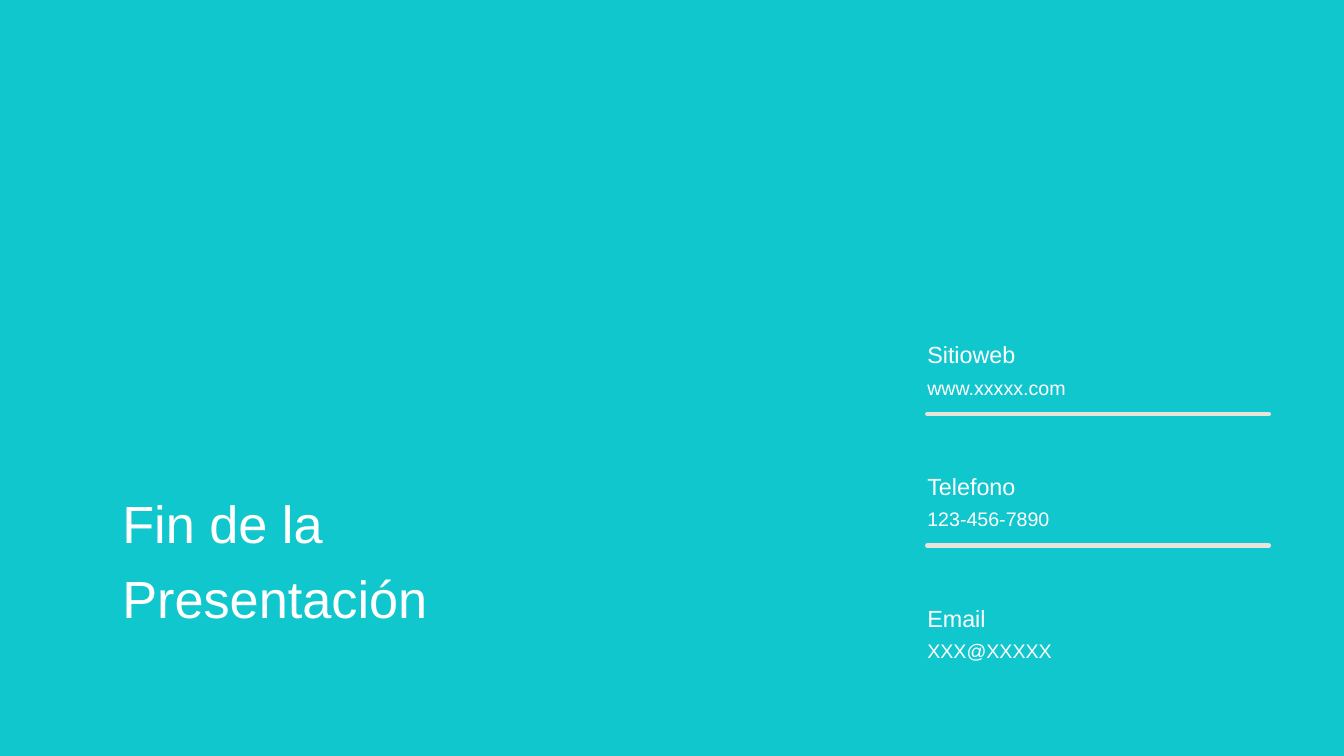
"""Build a closing slide with a title and a column of contact details."""
from typing import NamedTuple

from lxml.etree import SubElement
from pptx import Presentation
from pptx.dml.color import RGBColor
from pptx.enum.shapes import MSO_CONNECTOR as Connector
from pptx.enum.text import MSO_AUTO_SIZE as AutoSize
from pptx.oxml.ns import qn
from pptx.slide import Slide
from pptx.util import Inches, Pt

BACKGROUND, WHITE, RULE = "11C7CE", "FFFFFF", "E8E4DA"
CONTACT_LEFT, CONTACT_TOP, CONTACT_STEP = 13.8, 4.9, 1.96
CONTACT_WIDTH, RULE_WIDTH = 4.46, 5.08
VALUE_OFFSET, RULE_OFFSET = 0.55, 1.26


class Contact(NamedTuple):
    label: str
    value: str


class TextStyle(NamedTuple):
    size: float
    line_spacing: float


TITLE = TextStyle(56, 1.2)
LABEL = TextStyle(25, 1.4)
VALUE = TextStyle(21, 1.4)
CONTACTS = [
    Contact("Sitioweb", "www.xxxxx.com"),
    Contact("Telefono", "123-456-7890"),
    Contact("Email", "XXX@XXXXX"),
]


def color(value: str) -> RGBColor:
    return RGBColor.from_string(value)


def set_attributes(target: object, values: dict) -> None:
    for name, value in values.items():
        setattr(target, name, value)


def add_text(slide: Slide, lines: list[str], left: float, top: float,
             width: float, height: float, style: TextStyle) -> None:
    box = slide.shapes.add_textbox(
        Inches(left), Inches(top), Inches(width), Inches(height))
    frame = box.text_frame
    set_attributes(frame, {
        "margin_left": 0, "margin_top": 0, "margin_right": 0, "margin_bottom": 0,
        "word_wrap": True, "auto_size": AutoSize.SHAPE_TO_FIT_TEXT,
        "text": "\n".join(lines),
    })
    for paragraph in frame.paragraphs:
        paragraph.line_spacing = style.line_spacing
        for run in paragraph.runs:
            set_attributes(run.font, {"name": "Arial", "size": Pt(style.size)})
            run.font.color.rgb = color(WHITE)


def add_rule(slide: Slide, left: float, top: float, width: float) -> None:
    rule = slide.shapes.add_connector(
        Connector.STRAIGHT, Inches(left), Inches(top), Inches(left + width), Inches(top))
    rule.line.width = Pt(5)
    rule.line.color.rgb = color(RULE)
    rule.get_or_add_ln().set("cap", "rnd")
    SubElement(rule._element.spPr, qn("a:effectLst"))


def add_contact(slide: Slide, contact: Contact, top: float) -> None:
    add_text(slide, [contact.label], CONTACT_LEFT, top, CONTACT_WIDTH, 0.45, LABEL)
    add_text(slide, [contact.value], CONTACT_LEFT, top + VALUE_OFFSET,
             CONTACT_WIDTH, 0.35, VALUE)


def main() -> None:
    presentation = Presentation()
    set_attributes(presentation, {
        "slide_width": Inches(20), "slide_height": Inches(11.25)})
    slide = presentation.slides.add_slide(presentation.slide_layouts[6])
    slide.background.fill.solid()
    slide.background.fill.fore_color.rgb = color(BACKGROUND)

    add_text(slide, ["Fin de la", "Presentación"], 1.82, 7.12, 5.83, 1.87, TITLE)
    tops = [CONTACT_TOP + index * CONTACT_STEP for index in range(len(CONTACTS))]
    for contact, top in zip(CONTACTS, tops):
        add_contact(slide, contact, top)
    for top in tops[:-1]:
        add_rule(slide, CONTACT_LEFT, top + RULE_OFFSET, RULE_WIDTH)

    presentation.save("out.pptx")


if __name__ == "__main__":
    main()
